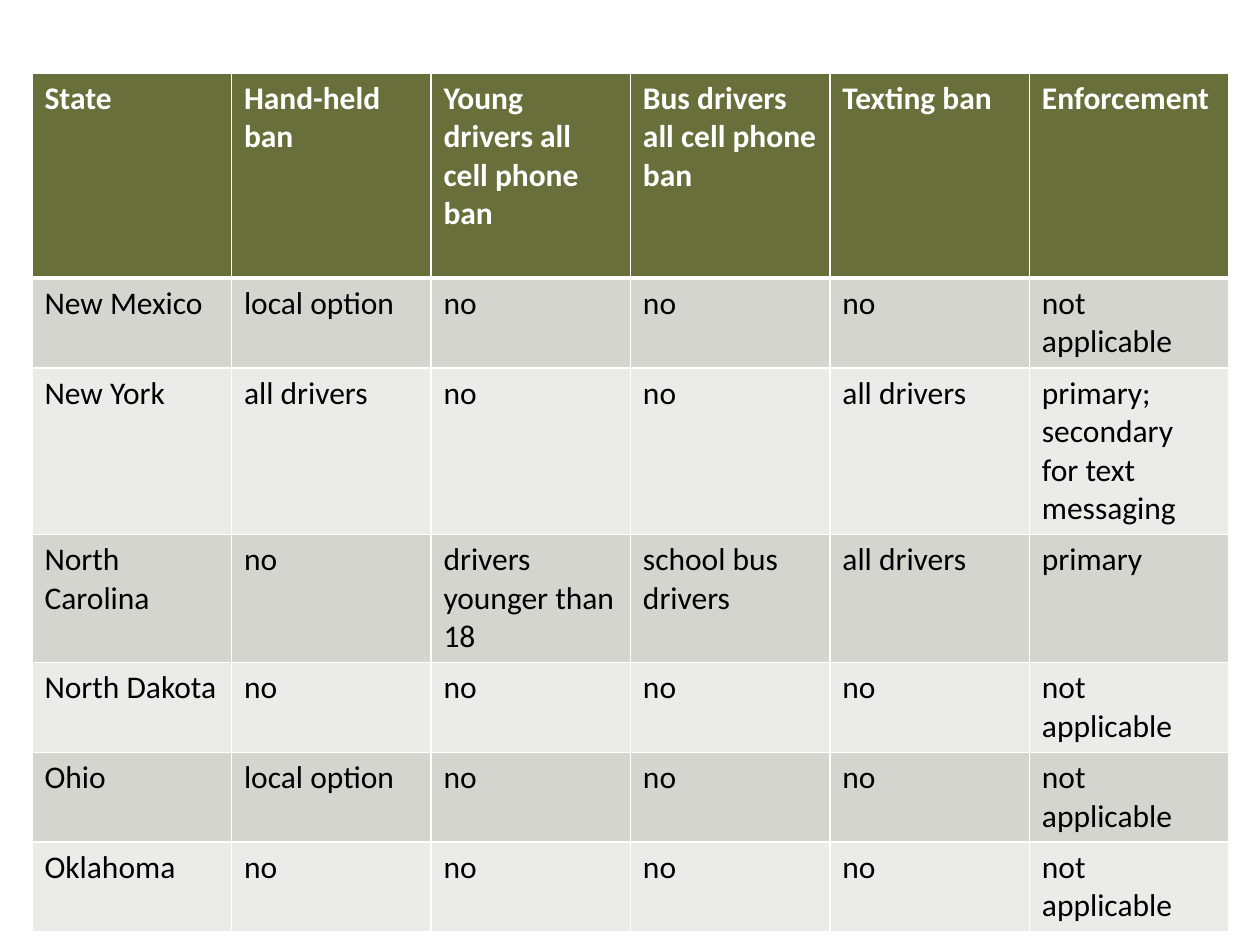
from dataclasses import dataclass

from lxml.etree import SubElement
from pptx import Presentation
from pptx.dml.color import RGBColor
from pptx.oxml.ns import qn
from pptx.util import Emu, Pt


@dataclass(frozen=True)
class Theme:
    font: str = "Calibri"
    text_size: int = 18
    header_fill: str = "686F3A"
    band_fills: tuple = ("D4D5CE", "EBEBE8")
    header_text: str = "FFFFFF"
    body_text: str = "000000"
    border: str = "FFFFFF"
    thin_line: int = 1
    thick_line: int = 3


theme = Theme()


def px(length):
    """Turn pixels, 126 to the inch, into EMU."""
    return Emu(round(length * 914400 / 126))


def add_border(cell, side, points):
    """Draw one side (L, R, T or B); call before the fill is set."""
    line = SubElement(cell._tc.get_or_add_tcPr(), qn(f"a:ln{side}"), w=str(Pt(points)))
    fill = SubElement(line, qn("a:solidFill"))
    SubElement(fill, qn("a:srgbClr"), val=theme.border)


rows = [
    ("State", "Hand-held ban", "Young drivers all cell phone ban",
     "Bus drivers all cell phone ban", "Texting ban", "Enforcement"),
    ("New Mexico", "local option", "no", "no", "no", "not applicable"),
    ("New York", "all drivers", "no", "no", "all drivers",
     "primary; secondary for text messaging"),
    ("North Carolina", "no", "drivers younger than 18", "school bus drivers",
     "all drivers", "primary"),
    ("North Dakota", "no", "no", "no", "no", "not applicable"),
    ("Ohio", "local option", "no", "no", "no", "not applicable"),
    ("Oklahoma", "no", "no", "no", "no", "not applicable"),
]
row_heights = [205, 90, 166, 128, 90, 89, 89]

presentation = Presentation()
presentation.slide_width = px(1260)
presentation.slide_height = px(945)
slide = presentation.slides.add_slide(presentation.slide_layouts[6])

table = slide.shapes.add_table(
    len(rows), len(rows[0]), px(32), px(73), px(1197), px(sum(row_heights))
).table

for row_index, (texts, height) in enumerate(zip(rows, row_heights)):
    table.rows[row_index].height = px(height)
    is_header = row_index == 0
    fill_color = theme.header_fill if is_header else theme.band_fills[(row_index - 1) % 2]
    text_color = theme.header_text if is_header else theme.body_text
    border_widths = {
        "L": theme.thin_line,
        "R": theme.thin_line,
        "T": theme.thick_line if row_index == 1 else theme.thin_line,
        "B": theme.thick_line if is_header else theme.thin_line,
    }
    for column_index, text in enumerate(texts):
        cell = table.cell(row_index, column_index)
        for side, points in border_widths.items():
            add_border(cell, side, points)
        cell.fill.solid()
        cell.fill.fore_color.rgb = RGBColor.from_string(fill_color)
        run = cell.text_frame.paragraphs[0].add_run()
        run.text = text
        run.font.name = theme.font
        run.font.size = Pt(theme.text_size)
        run.font.bold = is_header
        run.font.color.rgb = RGBColor.from_string(text_color)

presentation.save("out.pptx")
